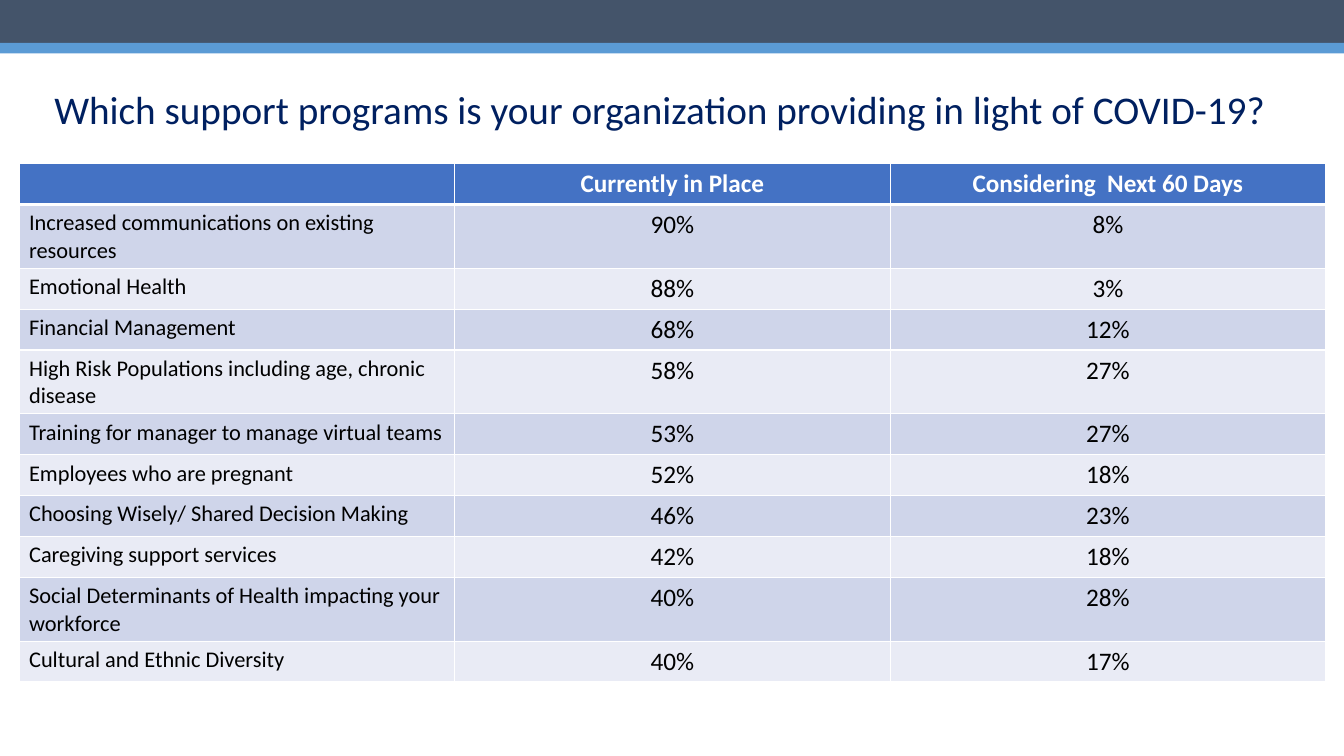
from lxml.etree import SubElement
from pptx import Presentation
from pptx.dml.color import RGBColor
from pptx.enum.shapes import MSO_SHAPE
from pptx.enum.text import MSO_ANCHOR, PP_ALIGN
from pptx.oxml.ns import qn
from pptx.util import Cm, Pt

SLATE = RGBColor(0x44, 0x54, 0x6A)
SKY = RGBColor(0x5B, 0x9B, 0xD5)
NAVY = RGBColor(0x00, 0x20, 0x60)
HEADER_BLUE = RGBColor(0x44, 0x72, 0xC4)
BAND_DARK = RGBColor(0xCF, 0xD5, 0xEA)
BAND_LIGHT = RGBColor(0xE9, 0xEB, 0xF5)
WHITE = RGBColor(0xFF, 0xFF, 0xFF)
BLACK = RGBColor(0x00, 0x00, 0x00)

QUESTION = "Which support programs is your organization providing in light of COVID-19?"
HEADINGS = ("", "Currently in Place", "Considering  Next 60 Days")
PROGRAMS = [
    ("Increased communications on existing resources", "90%", "8%"),
    ("Emotional Health", "88%", "3%"),
    ("Financial Management", "68%", "12%"),
    ("High Risk Populations including age, chronic disease", "58%", "27%"),
    ("Training for manager to manage virtual teams", "53%", "27%"),
    ("Employees who are pregnant", "52%", "18%"),
    ("Choosing Wisely/ Shared Decision Making", "46%", "23%"),
    ("Caregiving support services", "42%", "18%"),
    ("Social Determinants of Health impacting your workforce", "40%", "28%"),
    ("Cultural and Ethnic Diversity", "40%", "17%"),
]


def write(paragraph, text, color, **formats):
    paragraph.text = text
    font = paragraph.font
    for name, value in {"name": "Calibri", **formats}.items():
        setattr(font, name, value)
    font.color.rgb = color


def add_banner(slide, left, top, width, height):
    slate_height = int(height * 0.8)
    stripes = ((top, slate_height, SLATE),
               (top + slate_height, height - slate_height, SKY))
    for stripe_top, stripe_height, color in stripes:
        stripe = slide.shapes.add_shape(
            MSO_SHAPE.RECTANGLE, left, stripe_top, width, stripe_height)
        stripe.shadow.inherit = False
        stripe.fill.solid()
        stripe.fill.fore_color.rgb = color
        stripe.line.fill.background()


def add_question(slide, left, top, width, height):
    frame = slide.shapes.add_textbox(left, top, width, height).text_frame
    frame.word_wrap = True
    frame.vertical_anchor = MSO_ANCHOR.MIDDLE
    question = frame.paragraphs[0]
    question.line_spacing = 0.9
    write(question, QUESTION, NAVY, size=Pt(28))


def set_borders(cell, **widths):
    properties = cell._tc.get_or_add_tcPr()
    for side in "LRTB":
        border = SubElement(properties, qn(f"a:ln{side}"),
                            w=str(Pt(widths.get(side, 1))))
        fill = SubElement(border, qn("a:solidFill"))
        SubElement(fill, qn("a:srgbClr"), val=str(WHITE))


def add_programs(slide, left, top, width, height):
    rows = [HEADINGS, *PROGRAMS]
    table = slide.shapes.add_table(
        len(rows), len(HEADINGS), left, top, width, height).table
    for row_index, row in enumerate(rows):
        is_header = row_index == 0
        if is_header:
            fill, borders = HEADER_BLUE, {"B": 3}
        else:
            fill = BAND_DARK if row_index % 2 else BAND_LIGHT
            borders = {"T": 3} if row_index == 1 else {}
        for column, text in enumerate(row):
            cell = table.cell(row_index, column)
            set_borders(cell, **borders)
            cell.fill.solid()
            cell.fill.fore_color.rgb = fill
            paragraph = cell.text_frame.paragraphs[0]
            is_label = column == 0 and not is_header
            paragraph.alignment = PP_ALIGN.LEFT if is_label else PP_ALIGN.CENTER
            write(paragraph, text, WHITE if is_header else BLACK,
                  size=Pt(16 if is_label else 18), bold=is_header)


def main():
    presentation = Presentation()
    presentation.slide_width = Cm(33.87)
    presentation.slide_height = Cm(19.05)
    slide = presentation.slides.add_slide(presentation.slide_layouts[6])
    add_banner(slide, 0, 0, presentation.slide_width, Cm(1.35))
    add_question(slide, Cm(1.12), Cm(0.97), Cm(31.62), Cm(3.68))
    add_programs(slide, Cm(0.48), Cm(4.12), Cm(32.93), Cm(11.33))
    presentation.save("out.pptx")


if __name__ == "__main__":
    main()
